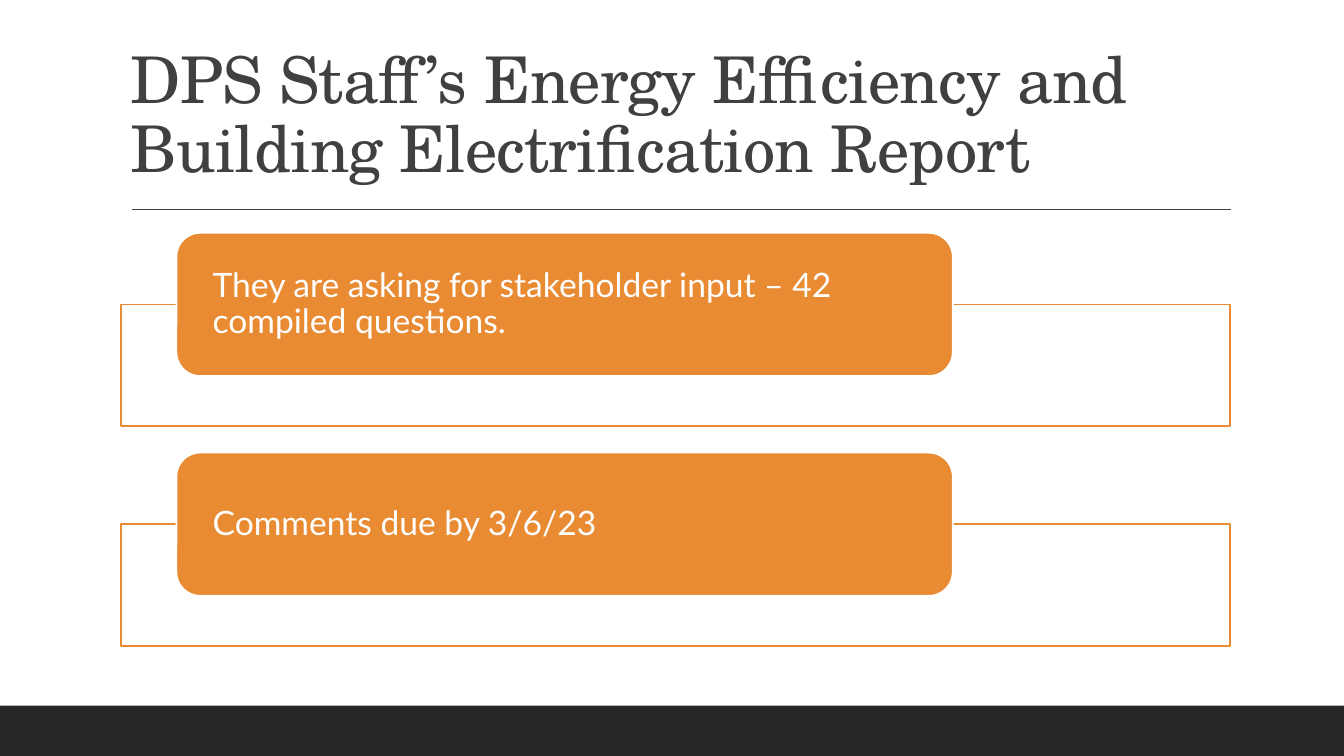
from dataclasses import dataclass

from lxml.etree import SubElement
from pptx import Presentation
from pptx.dml.color import RGBColor
from pptx.enum.shapes import MSO_CONNECTOR, MSO_SHAPE
from pptx.enum.text import MSO_ANCHOR, PP_ALIGN
from pptx.oxml.ns import qn
from pptx.util import Inches, Pt


@dataclass(frozen=True)
class Theme:
    ink: RGBColor = RGBColor.from_string("404040")
    footer: RGBColor = RGBColor.from_string("262626")
    accent: RGBColor = RGBColor.from_string("E88B33")
    paper: RGBColor = RGBColor.from_string("FFFFFF")
    title_font: str = "TeX Gyre Schola"
    body_font: str = "Lato"
    title_size: float = 46
    body_size: float = 24
    rule_width: float = 1
    border_width: float = 1.25


@dataclass(frozen=True)
class Box:
    left: float
    top: float
    width: float
    height: float

    def share(self, left, top, width, height):
        """Return the inner box given as shares of this one."""
        return Box(self.left + left * self.width, self.top + top * self.height,
                   width * self.width, height * self.height)

    def rows(self, count, gap):
        height = (self.height - gap * (count - 1)) / count
        return [Box(self.left, self.top + row * (height + gap), self.width, height)
                for row in range(count)]

    def lengths(self):
        return [Inches(value) for value in (self.left, self.top, self.width, self.height)]


THEME = Theme()
SLIDE = Box(0, 0, 13.33, 7.5)
TITLE = Box(1.2, 0.31, 11, 1.59)
RULE = Box(1.31, 2.08, 10.9, 0)
CARDS = Box(1.2, 2.31, 11, 4.1)
CARD_GAP = 0.26
HEADING = "DPS Staff’s Energy Efficiency and Building Electrification Report"
CARD_TEXTS = ["They are asking for stakeholder input – 42 compiled questions.",
              "Comments due by 3/6/23"]


def apply(target, values):
    for name, value in values.items():
        setattr(target, name, value)


def add_block(slide, kind, box, fill, border=None):
    shape = slide.shapes.add_shape(kind, *box.lengths())
    shape.shadow.inherit = False
    shape.fill.solid()
    shape.fill.fore_color.rgb = fill
    if border is None:
        shape.line.fill.background()
    else:
        shape.line.color.rgb = border
        shape.line.width = Pt(THEME.border_width)
    return shape


def write_text(shape, text, color, frame_format, font_format):
    frame = shape.text_frame
    apply(frame, {"word_wrap": True, **frame_format})
    paragraph = frame.paragraphs[0]
    apply(paragraph, {"alignment": PP_ALIGN.LEFT, "line_spacing": 0.9})
    run = paragraph.add_run()
    run.text = text
    apply(run.font, font_format)
    run.font.color.rgb = color
    return run


def add_title(slide, box):
    title = slide.shapes.add_textbox(*box.lengths())
    run = write_text(title, HEADING, THEME.ink, {"vertical_anchor": MSO_ANCHOR.BOTTOM},
                     {"name": THEME.title_font, "size": Pt(THEME.title_size)})
    run.font._element.set("spc", "-50")


def add_rule(slide, box):
    left, top, width, height = box.lengths()
    rule = slide.shapes.add_connector(MSO_CONNECTOR.STRAIGHT, left, top,
                                      left + width, top + height)
    rule.line.color.rgb = THEME.ink
    rule.line.width = Pt(THEME.rule_width)
    SubElement(rule._element.spPr, qn("a:effectLst"))


def add_card(slide, box, text):
    """Draw an outlined panel with a filled label over its upper edge."""
    add_block(slide, MSO_SHAPE.RECTANGLE, box.share(0, 0.37, 1, 0.63),
              THEME.paper, THEME.accent)
    label = add_block(slide, MSO_SHAPE.ROUNDED_RECTANGLE, box.share(0.05, 0, 0.7, 0.74),
                      THEME.accent, THEME.paper)
    write_text(label, text, THEME.paper,
               {"vertical_anchor": MSO_ANCHOR.MIDDLE,
                "margin_left": Inches(0.29), "margin_right": Inches(0.29),
                "margin_top": 0, "margin_bottom": 0},
               {"name": THEME.body_font, "size": Pt(THEME.body_size)})


def main():
    presentation = Presentation()
    apply(presentation, {"slide_width": Inches(SLIDE.width),
                         "slide_height": Inches(SLIDE.height)})
    slide = presentation.slides.add_slide(presentation.slide_layouts[6])
    add_block(slide, MSO_SHAPE.RECTANGLE, SLIDE.share(0, 14 / 15, 1, 1 / 15), THEME.footer)
    add_rule(slide, RULE)
    add_title(slide, TITLE)
    for box, text in zip(CARDS.rows(len(CARD_TEXTS), CARD_GAP), CARD_TEXTS):
        add_card(slide, box, text)
    presentation.save("out.pptx")


if __name__ == "__main__":
    main()
